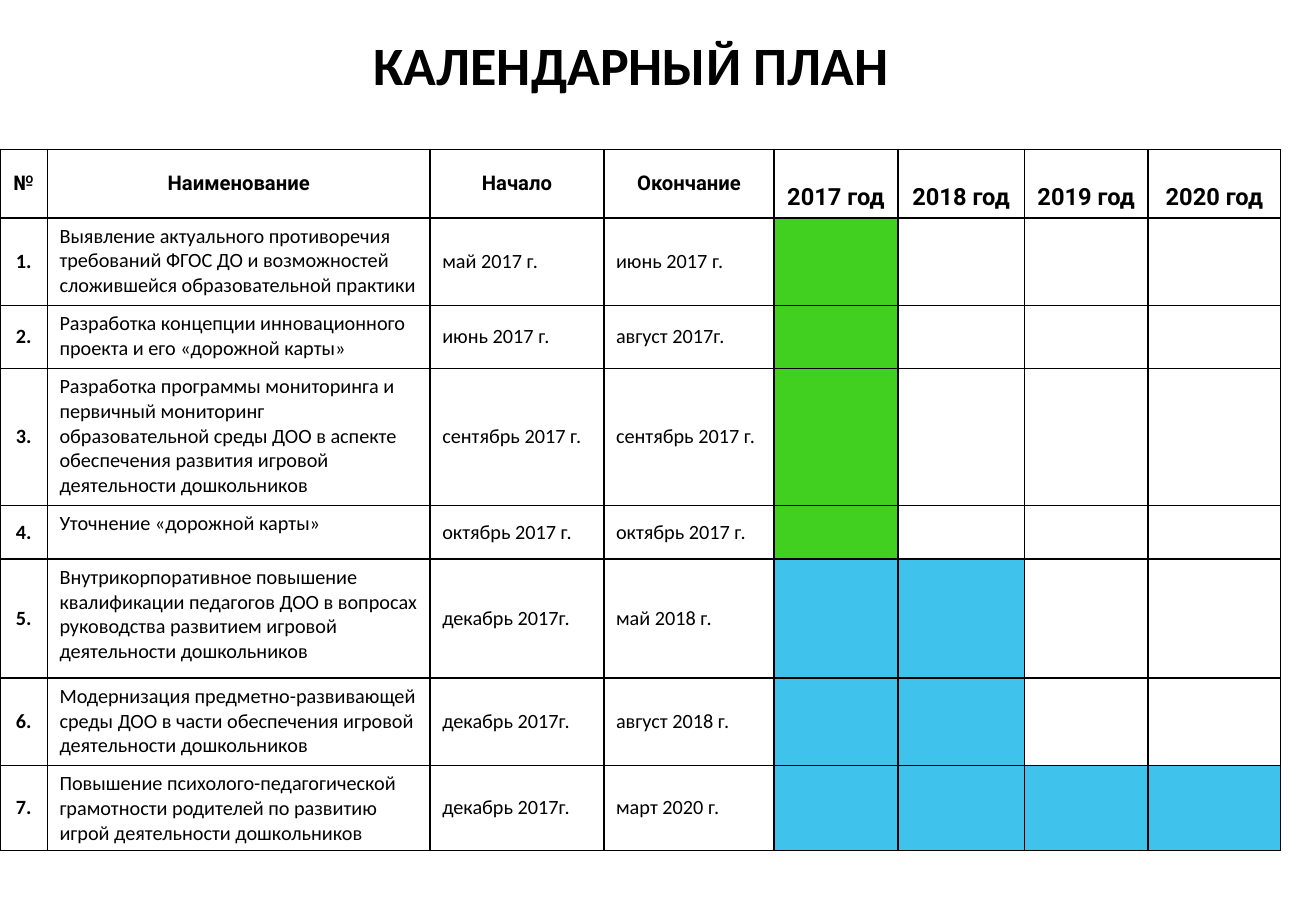
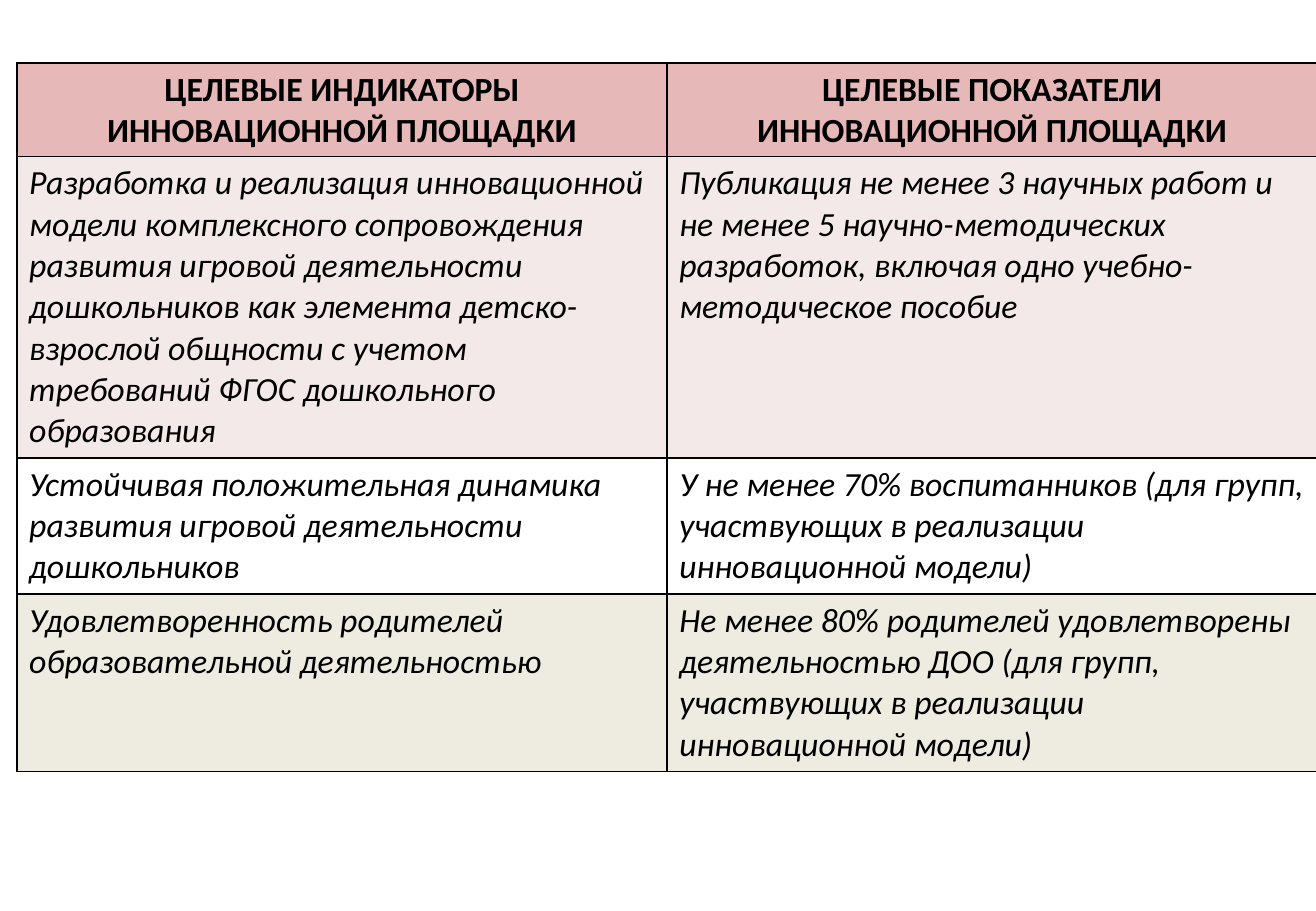
from dataclasses import dataclass

from lxml.etree import SubElement
from pptx import Presentation
from pptx.dml.color import RGBColor
from pptx.enum.text import MSO_ANCHOR, PP_ALIGN
from pptx.oxml.ns import qn
from pptx.util import Inches, Pt


@dataclass(frozen=True)
class Theme:
    ink: str = "000000"
    paper: str = "FFFFFF"
    preparation: str = "42D020"
    delivery: str = "3FC2EB"
    rose: str = "E6B9B8"
    blush: str = "F4E9E9"
    sand: str = "EEECE1"
    body_font: str = "Calibri"
    head_font: str = "Roboto"
    title_size: int = 32
    indicator_size: int = 20
    year_size: int = 14
    plan_size: int = 12
    border: float = 1


THEME = Theme()

PLAN_TITLE = "КАЛЕНДАРНЫЙ ПЛАН"
PLAN_HEADINGS = ["№", "Наименование", "Начало", "Окончание"]
YEARS = [2017, 2018, 2019, 2020]
# name, start, end, last year of the bar, bar colour
STAGES = [
    ("Выявление актуального противоречия требований ФГОС ДО и возможностей "
     "сложившейся образовательной практики",
     "май 2017 г.", "июнь 2017 г.", 2017, THEME.preparation),
    ("Разработка концепции инновационного проекта и его «дорожной карты»",
     "июнь 2017 г.", "август 2017г.", 2017, THEME.preparation),
    ("Разработка программы мониторинга и первичный мониторинг образовательной "
     "среды ДОО в аспекте обеспечения развития игровой деятельности дошкольников",
     "сентябрь 2017 г.", "сентябрь 2017 г.", 2017, THEME.preparation),
    ("Уточнение «дорожной карты»",
     "октябрь 2017 г.", "октябрь 2017 г.", 2017, THEME.preparation),
    ("Внутрикорпоративное повышение квалификации педагогов ДОО в вопросах "
     "руководства развитием игровой деятельности дошкольников",
     "декабрь 2017г.", "май 2018 г.", 2018, THEME.delivery),
    ("Модернизация предметно-развивающей среды ДОО в части обеспечения игровой "
     "деятельности дошкольников",
     "декабрь 2017г.", "август 2018 г.", 2018, THEME.delivery),
    ("Повышение психолого-педагогической грамотности родителей по развитию "
     "игрой деятельности дошкольников",
     "декабрь 2017г.", "март 2020 г.", 2020, THEME.delivery),
]
PLAN_WIDTHS = [0.39, 3.15, 1.43, 1.4, 1.02, 1.04, 1.02, 1.09]
PLAN_HEIGHTS = [0.56, 0.72, 0.52, 1.13, 0.44, 0.98, 0.72, 0.7]

INDICATOR_HEADINGS = ["ЦЕЛЕВЫЕ ИНДИКАТОРЫ ИННОВАЦИОННОЙ ПЛОЩАДКИ",
                      "ЦЕЛЕВЫЕ ПОКАЗАТЕЛИ ИННОВАЦИОННОЙ ПЛОЩАДКИ"]
INDICATORS = [
    ("Разработка и реализация инновационной модели комплексного сопровождения "
     "развития игровой деятельности дошкольников как элемента детско-взрослой "
     "общности с учетом требований ФГОС дошкольного образования",
     "Публикация не менее 3 научных работ и не менее 5 научно-методических "
     "разработок, включая одно учебно-методическое пособие", THEME.blush),
    ("Устойчивая положительная динамика развития игровой деятельности дошкольников",
     "У не менее 70% воспитанников (для групп, участвующих в реализации "
     "инновационной модели)", THEME.paper),
    ("Удовлетворенность родителей образовательной деятельностью",
     "Не менее 80% родителей удовлетворены деятельностью ДОО (для групп, "
     "участвующих в реализации инновационной модели)", THEME.sand),
]
INDICATOR_WIDTHS = [5.35, 5.35]
INDICATOR_HEIGHTS = [0.77, 2.48, 1.12, 1.46]

# Text formats
PLAN_TEXT = {"name": THEME.body_font, "size": Pt(THEME.plan_size), "bold": False}
PLAN_NUMBER = {**PLAN_TEXT, "bold": True}
PLAN_HEAD = {**PLAN_NUMBER, "name": THEME.head_font}
YEAR_HEAD = {**PLAN_HEAD, "size": Pt(THEME.year_size)}
TITLE = {**PLAN_NUMBER, "size": Pt(THEME.title_size)}
INDICATOR_HEAD = {**PLAN_NUMBER, "size": Pt(THEME.indicator_size)}
INDICATOR_TEXT = {**INDICATOR_HEAD, "bold": False, "italic": True}

# Cell layouts
CENTRED = {"vertical_anchor": MSO_ANCHOR.MIDDLE}
LOWERED = {**CENTRED, "margin_top": Inches(0.28)}


def apply(target, values):
    for attribute, value in values.items():
        setattr(target, attribute, value)


def write(frame, text, font, align=PP_ALIGN.LEFT):
    paragraph = frame.paragraphs[0]
    paragraph.alignment = align
    run = paragraph.add_run()
    run.text = text
    apply(run.font, font)
    run.font.color.rgb = RGBColor.from_string(THEME.ink)


def paint(cell, colour):
    cell.fill.solid()
    cell.fill.fore_color.rgb = RGBColor.from_string(colour)


def outline(cell):
    """Draw the four borders, which must come before the fill in the XML."""
    properties = cell._tc.get_or_add_tcPr()
    for position, side in enumerate(("lnL", "lnR", "lnT", "lnB")):
        line = SubElement(properties, qn(f"a:{side}"), w=str(Pt(THEME.border)))
        fill = SubElement(line, qn("a:solidFill"))
        SubElement(fill, qn("a:srgbClr"), val=THEME.ink)
        properties.insert(position, line)


def add_grid(slide, left, top, widths, heights):
    """Add a plain white table with black borders."""
    table = slide.shapes.add_table(
        len(heights), len(widths), Inches(left), Inches(top),
        Inches(sum(widths)), Inches(sum(heights))).table
    apply(table, {"first_row": False, "horz_banding": False})
    for column, width in zip(table.columns, widths):
        column.width = Inches(width)
    for row, height in zip(table.rows, heights):
        row.height = Inches(height)
    for cell in table.iter_cells():
        paint(cell, THEME.paper)
        outline(cell)
    return table


def fill_cell(cell, text, font, align=PP_ALIGN.LEFT, layout=None):
    apply(cell, layout or {})
    write(cell.text_frame, text, font, align)


def build_plan(slide):
    title = slide.shapes.add_textbox(Inches(0), Inches(0.21), Inches(10.39), Inches(0.63))
    title.text_frame.word_wrap = True
    write(title.text_frame, PLAN_TITLE, TITLE, PP_ALIGN.CENTER)

    table = add_grid(slide, 0, 1.23, PLAN_WIDTHS, PLAN_HEIGHTS)
    first_year = len(PLAN_HEADINGS)
    for column, heading in enumerate(PLAN_HEADINGS):
        fill_cell(table.cell(0, column), heading, PLAN_HEAD, PP_ALIGN.CENTER, CENTRED)
    for column, year in enumerate(YEARS, first_year):
        fill_cell(table.cell(0, column), f"{year} год", YEAR_HEAD, PP_ALIGN.CENTER, LOWERED)

    for row, (name, start, end, last_year, colour) in enumerate(STAGES, 1):
        fill_cell(table.cell(row, 0), f"{row}.", PLAN_NUMBER, PP_ALIGN.CENTER, CENTRED)
        fill_cell(table.cell(row, 1), name, PLAN_TEXT)
        for column, date in enumerate((start, end), 2):
            fill_cell(table.cell(row, column), date, PLAN_TEXT, layout=CENTRED)
        for column, year in enumerate(YEARS, first_year):
            if year <= last_year:
                paint(table.cell(row, column), colour)


def build_indicators(slide):
    table = add_grid(slide, 0.14, 0.52, INDICATOR_WIDTHS, INDICATOR_HEIGHTS)
    for column, heading in enumerate(INDICATOR_HEADINGS):
        fill_cell(table.cell(0, column), heading, INDICATOR_HEAD, PP_ALIGN.CENTER)
        paint(table.cell(0, column), THEME.rose)
    for row, (*texts, colour) in enumerate(INDICATORS, 1):
        for column, text in enumerate(texts):
            fill_cell(table.cell(row, column), text, INDICATOR_TEXT)
            paint(table.cell(row, column), colour)


def main():
    deck = Presentation()
    apply(deck, {"slide_width": Inches(10.83), "slide_height": Inches(7.5)})
    for build in (build_plan, build_indicators):
        build(deck.slides.add_slide(deck.slide_layouts[6]))
    deck.save("out.pptx")


if __name__ == "__main__":
    main()
